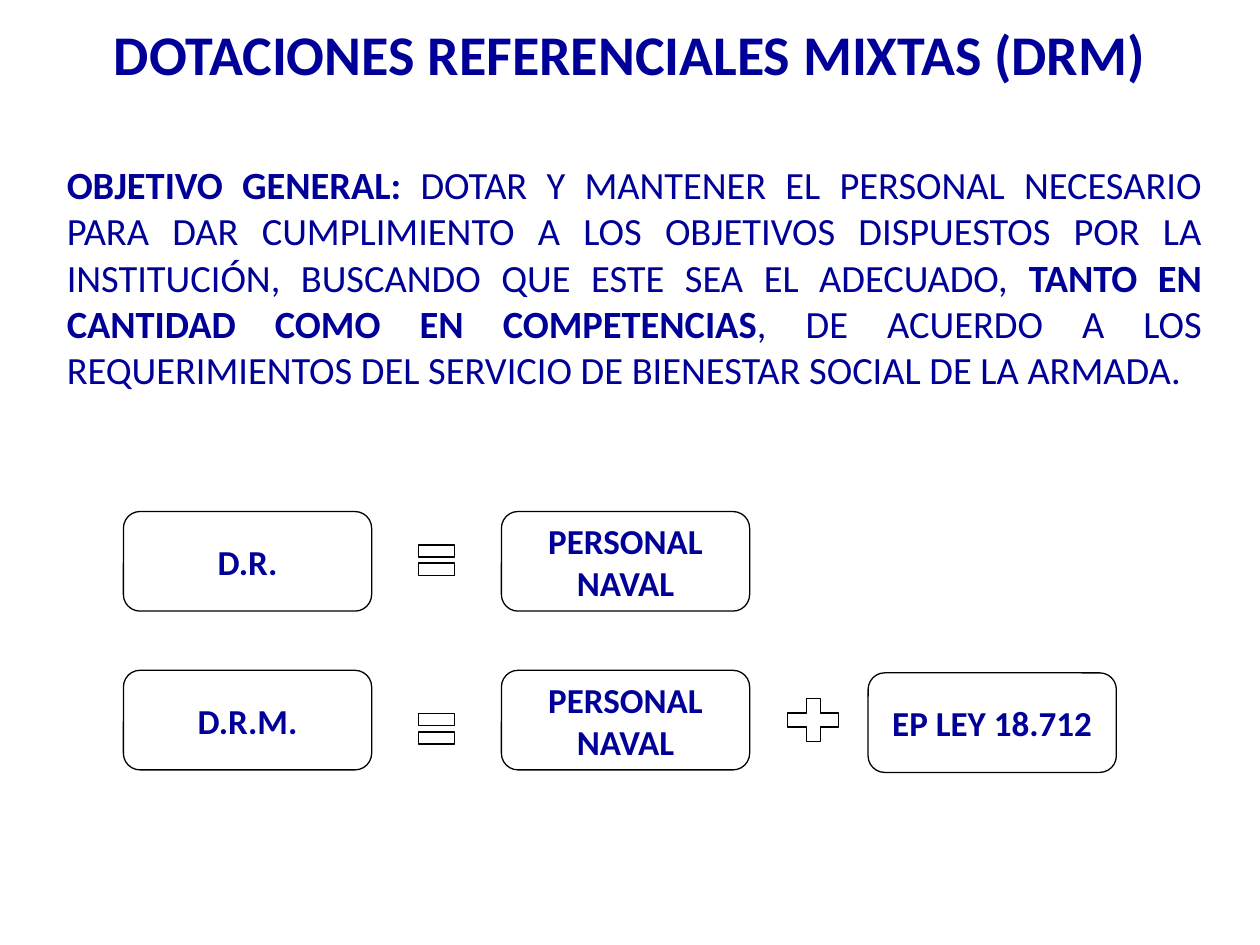
from lxml.etree import SubElement
from pptx import Presentation
from pptx.dml.color import RGBColor
from pptx.enum.shapes import MSO_SHAPE as Kind
from pptx.enum.text import MSO_ANCHOR as Anchor, MSO_AUTO_SIZE as Fit, PP_ALIGN as Align
from pptx.oxml.ns import qn
from pptx.util import Inches, Pt

NAVY = "000099"
BOX = (1.97, 0.79)
EQUAL = (0.39, 0.41)
PLUS = (0.55, 0.47)


def paint(target, color):
    target.rgb = RGBColor.from_string(color)


def style(font, size, bold=None):
    font.name = "Calibri"
    font.size = Pt(size)
    font.bold = bold
    paint(font.color, NAVY)


def place(shape, left, top, width, height):
    shape.left, shape.top = Inches(left), Inches(top)
    shape.width, shape.height = Inches(width), Inches(height)


def add_title(slide, text):
    title = slide.shapes.title
    place(title, 0.75, 0.05, 8.5, 0.75)
    frame = title.text_frame
    frame.text = text
    frame.auto_size = Fit.NONE
    frame.vertical_anchor = Anchor.MIDDLE
    para = frame.paragraphs[0]
    para.alignment = Align.CENTER
    style(para.font, 32, True)


def add_body(slide, parts):
    body = slide.placeholders[1]
    place(body, 0.43, 1.23, 9.21, 1.97)
    frame = body.text_frame
    frame.auto_size = Fit.NONE
    para = frame.paragraphs[0]
    props = para._p.get_or_add_pPr()
    props.set("marL", "0")
    props.set("indent", "0")
    SubElement(props, qn("a:buNone"))
    para.alignment = Align.JUSTIFY
    para.space_before = Pt(0)
    style(para.font, 22)
    for text, bold in parts:
        run = para.add_run()
        run.text = text
        run.font.bold = bold


def add_shape(slide, kind, left, top, size):
    shape = slide.shapes.add_shape(kind, *map(Inches, (left, top, *size)))
    shape.shadow.inherit = False
    shape.fill.solid()
    paint(shape.fill.fore_color, "FFFFFF")
    tint = shape.fill._xPr.find(qn("a:solidFill"))[0]
    SubElement(tint, qn("a:alpha"), val="50000")
    paint(shape.line.color, "000000")
    shape.line.width = Pt(0.75)
    return shape


def add_box(slide, text, left, top):
    frame = add_shape(slide, Kind.ROUNDED_RECTANGLE, left, top, BOX).text_frame
    frame.text = text
    frame.word_wrap = True
    frame.vertical_anchor = Anchor.MIDDLE
    para = frame.paragraphs[0]
    para.alignment = Align.CENTER
    style(para.font, 20, True)


def main():
    deck = Presentation()
    deck.slide_width, deck.slide_height = Inches(10), Inches(7.5)
    slide = deck.slides.add_slide(deck.slide_layouts[1])
    add_title(slide, "DOTACIONES REFERENCIALES MIXTAS (DRM)")
    add_body(slide, [
        ("OBJETIVO GENERAL: ", True),
        ("DOTAR Y MANTENER EL PERSONAL NECESARIO PARA DAR CUMPLIMIENTO "
         "A LOS OBJETIVOS DISPUESTOS POR LA INSTITUCIÓN, BUSCANDO QUE "
         "ESTE SEA EL ADECUADO, ", False),
        ("TANTO EN CANTIDAD COMO EN COMPETENCIAS", True),
        (", DE ACUERDO A LOS REQUERIMIENTOS DEL SERVICIO DE BIENESTAR "
         "SOCIAL DE LA ARMADA.", False),
    ])
    for name, top, sign in (("D.R.", 4.06, 4.24), ("D.R.M.", 5.32, 5.58)):
        add_box(slide, name, 0.98, top)
        add_shape(slide, Kind.MATH_EQUAL, 3.27, sign, EQUAL)
        add_box(slide, "PERSONAL NAVAL", 3.98, top)
    add_shape(slide, Kind.MATH_PLUS, 6.18, 5.48, PLUS)
    add_box(slide, "EP LEY 18.712", 6.89, 5.34)
    deck.save("out.pptx")


if __name__ == "__main__":
    main()
